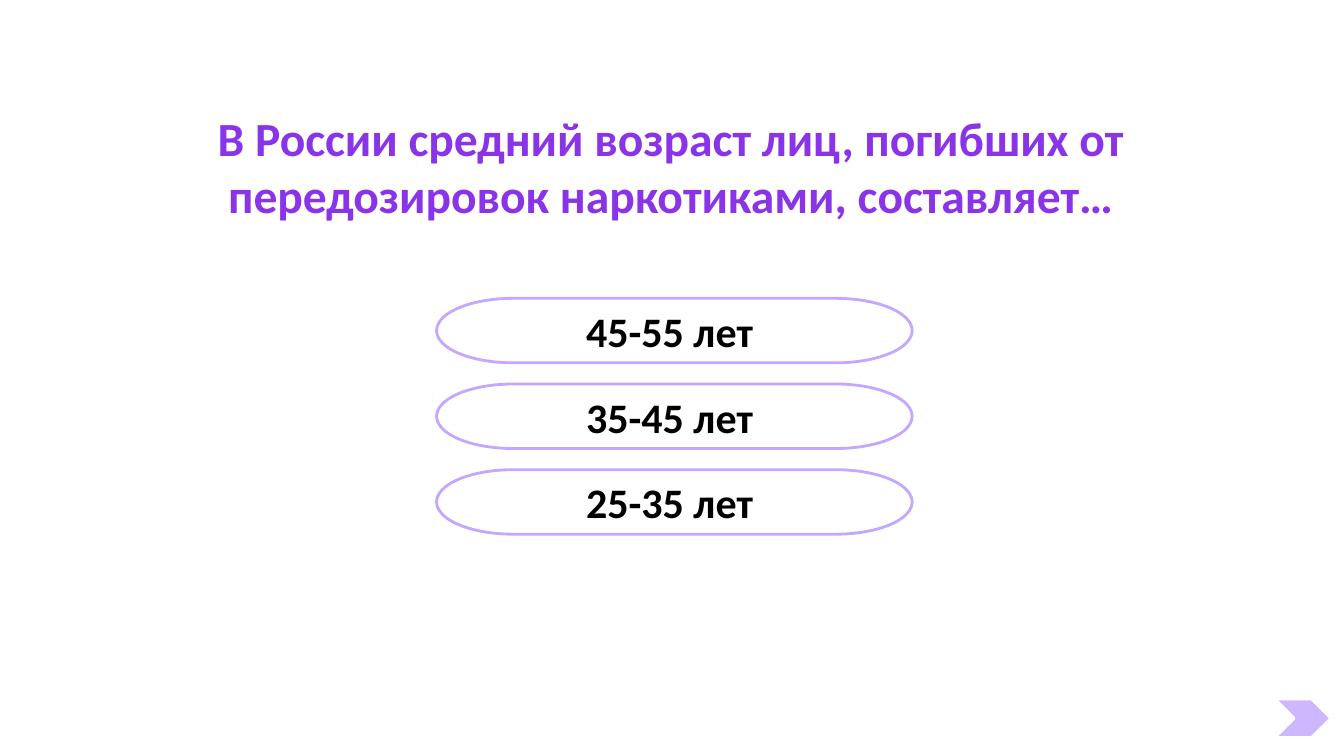
from dataclasses import dataclass

from pptx import Presentation
from pptx.dml.color import RGBColor as Rgb
from pptx.enum import shapes, text
from pptx.util import Pt

# Content
QUERY = "В России средний возраст лиц, погибших от передозировок наркотиками, составляет…"
AGES = ["45-55 лет ", "35-45 лет ", "25-35 лет "]


@dataclass(frozen=True)
class Theme:
    font: str = "Calibri"
    title: Rgb = Rgb(0x8A, 0x34, 0xE8)
    ink: Rgb = Rgb(0, 0, 0)
    edge: Rgb = Rgb(0xC4, 0xA7, 0xFF)
    arrow: Rgb = Rgb(0xCF, 0xB7, 0xFF)
    paper: Rgb = Rgb(0xFF, 0xFF, 0xFF)
    big: int = 34
    mid: int = 30


THEME = Theme()

# Layout in points: left, top, width, height
PAGE = (960, 540)
HEAD = (126, 74.2, 706.3, 90)
PILL = (311.8, 213.1, 339.8, 46.1)
STEP = 61.2
NEXT = (910.1, 499, 41, 28.1)


def place(box):
    return [Pt(side) for side in box]


def write(shape, words, size, color):
    frame = shape.text_frame
    frame.text = words
    frame.word_wrap = True
    line = frame.paragraphs[0]
    line.alignment = text.PP_ALIGN.CENTER
    font = line.runs[0].font
    font.name, font.size, font.bold = THEME.font, Pt(size), True
    font.color.rgb = color


def draw(slide, kind, box, edge, width, fill=None):
    shape = slide.shapes.add_shape(kind, *place(box))
    shape.shadow.inherit = False
    if fill is None:
        shape.fill.background()
    else:
        shape.fill.solid()
        shape.fill.fore_color.rgb = fill
    shape.line.color.rgb = edge
    shape.line.width = Pt(width)
    return shape


def main():
    deck = Presentation()
    deck.slide_width, deck.slide_height = place(PAGE)
    slide = deck.slides.add_slide(deck.slide_layouts[6])
    kinds = shapes.MSO_SHAPE

    # Question
    head = slide.shapes.add_textbox(*place(HEAD))
    write(head, QUERY, THEME.big, THEME.title)
    head.text_frame.auto_size = text.MSO_AUTO_SIZE.SHAPE_TO_FIT_TEXT

    # Answers, evenly stacked
    left, top, width, height = PILL
    for row, age in enumerate(AGES):
        box = (left, top + row * STEP, width, height)
        pill = draw(slide, kinds.FLOWCHART_TERMINATOR, box, THEME.edge, 2)
        write(pill, age, THEME.mid, THEME.ink)
        pill.text_frame.vertical_anchor = text.MSO_ANCHOR.MIDDLE

    # Arrow to the next question
    draw(slide, kinds.CHEVRON, NEXT, THEME.paper, 2.5, THEME.arrow)

    deck.save("out.pptx")


if __name__ == "__main__":
    main()
